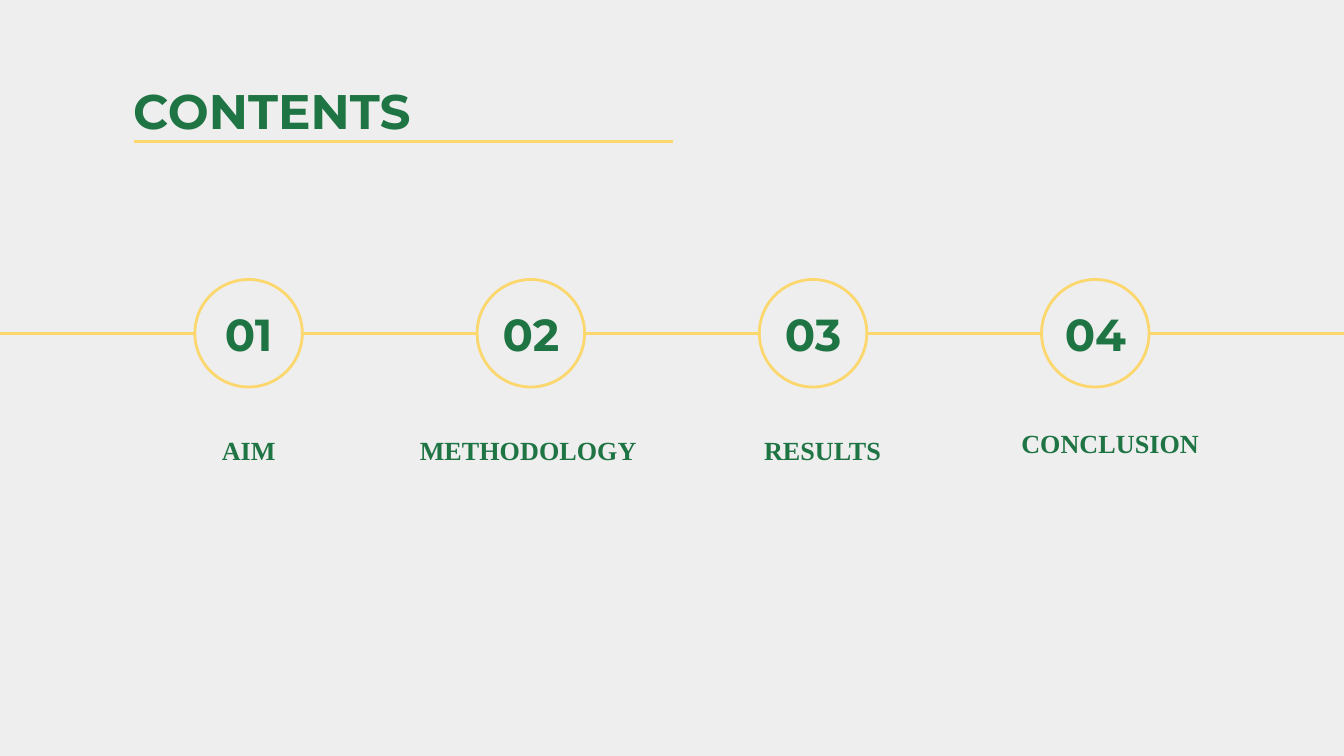
"""Build a contents slide with four numbered stops on a timeline."""
from lxml import etree
from pptx import Presentation
from pptx.dml.color import RGBColor
from pptx.enum.shapes import MSO_CONNECTOR, MSO_SHAPE
from pptx.enum.text import MSO_ANCHOR, MSO_AUTO_SIZE, PP_ALIGN
from pptx.oxml.ns import qn
from pptx.util import Inches, Pt

GREEN = RGBColor(0x1F, 0x74, 0x44)
YELLOW = RGBColor(0xFB, 0xD7, 0x6D)
GREY = RGBColor(0xEE, 0xEE, 0xEE)
LINE, OVAL = MSO_CONNECTOR.STRAIGHT, MSO_SHAPE.OVAL
LEFT, CENTER = PP_ALIGN.LEFT, PP_ALIGN.CENTER
TOP, MIDDLE = MSO_ANCHOR.TOP, MSO_ANCHOR.MIDDLE
NO_FIT = MSO_AUTO_SIZE.NONE

W = 10
H = W * 9 / 16
COL = 0.21 * W
FIRST = 1.85
AXIS = 2.48
CIRCLE = 0.8
BOX = 1.85
INSET = 0.1
STOPS = [
    ("AIM", 0, 3.13),
    ("METHODOLOGY", -0.02, 3.13),
    ("RESULTS", 0.07, 3.13),
    ("CONCLUSION", 0.11, 3.08),
]


def add_line(x1, x2, y):
    c = s.shapes.add_connector(LINE, Inches(x1), Inches(y), Inches(x2), Inches(y))
    c.line.color.rgb = YELLOW
    c.line.width = Pt(1.5)
    etree.SubElement(c._element.spPr, qn("a:effectLst"))


def set_text(sp, text, font, size, align, anchor):
    tf = sp.text_frame
    tf.word_wrap = True
    tf.auto_size = NO_FIT
    tf.vertical_anchor = anchor
    tf.margin_left = tf.margin_right = Inches(INSET)
    tf.margin_top = tf.margin_bottom = Inches(INSET)
    p = tf.paragraphs[0]
    p.alignment = align
    r = p.add_run()
    r.text = text
    r.font.name = font
    r.font.size = Pt(size)
    r.font.bold = True
    r.font.color.rgb = GREEN


prs = Presentation()
prs.slide_width, prs.slide_height = Inches(W), Inches(H)
s = prs.slides.add_slide(prs.slide_layouts[5])
s.background.fill.solid()
s.background.fill.fore_color.rgb = GREY

title = s.shapes.title
title.left, title.top = Inches(0.89), Inches(0.5)
title.width, title.height = Inches(8.21), Inches(0.63)
set_text(title, "CONTENTS", "Montserrat", 26, LEFT, TOP)
add_line(0.1 * W, 0.5 * W + 0.01, 1.05)

add_line(-0.02, W + 0.02, AXIS)
for i, (label, shift, label_top) in enumerate(STOPS):
    x = FIRST + i * COL
    sp = s.shapes.add_shape(OVAL, Inches(x - CIRCLE / 2), Inches(AXIS - CIRCLE / 2),
                            Inches(CIRCLE), Inches(CIRCLE))
    sp.shadow.inherit = False
    sp.fill.solid()
    sp.fill.fore_color.rgb = GREY
    sp.line.color.rgb = YELLOW
    sp.line.width = Pt(1.5)

    number = s.shapes.add_textbox(Inches(x - BOX / 2), Inches(2.21), Inches(BOX), Inches(0.55))
    set_text(number, f"{i + 1:02}", "Montserrat", 24, CENTER, MIDDLE)

    caption = s.shapes.add_textbox(Inches(x + shift - BOX / 2), Inches(label_top),
                                   Inches(BOX), Inches(0.63))
    set_text(caption, label, "Times New Roman", 14, CENTER, TOP)

prs.save("out.pptx")
